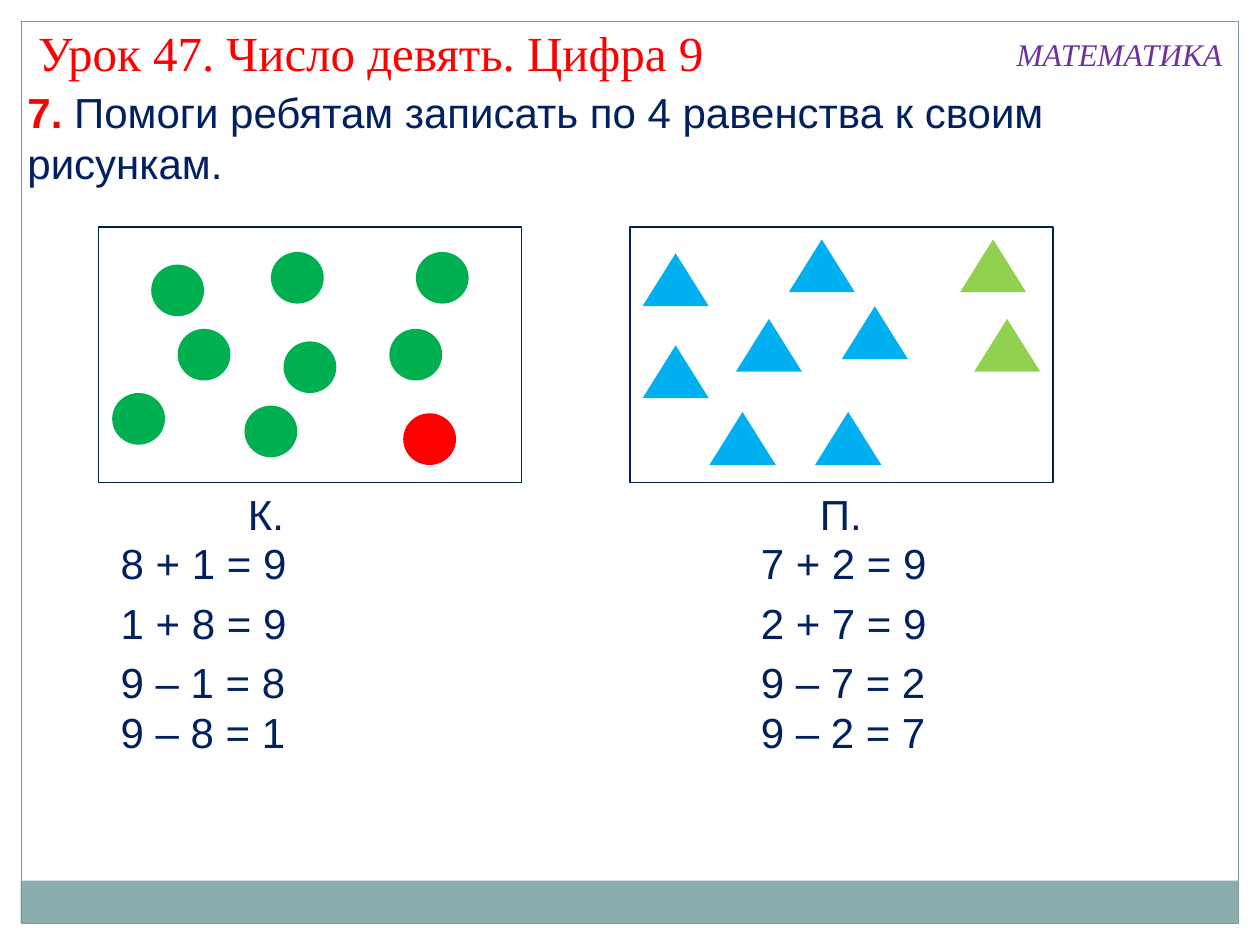
from pptx import Presentation
from pptx.dml.color import RGBColor
from pptx.enum import shapes, text
from pptx.util import Pt

WHITE = RGBColor(0xFF, 0xFF, 0xFF)
BAND = RGBColor(0x8C, 0xAD, 0xAE)
BORDER = RGBColor(0x7C, 0x99, 0x9A)
NAVY = RGBColor(0x00, 0x20, 0x60)
GREEN = RGBColor(0x00, 0xB0, 0x50)
RED = RGBColor(0xFF, 0x00, 0x00)
BLUE = RGBColor(0x00, 0xB0, 0xF0)
LIME = RGBColor(0x92, 0xD0, 0x50)
PURPLE = RGBColor(0x70, 0x30, 0xA0)

RECTANGLE = shapes.MSO_SHAPE.RECTANGLE
CIRCLE = shapes.MSO_SHAPE.FLOWCHART_CONNECTOR
TRIANGLE = shapes.MSO_SHAPE.ISOSCELES_TRIANGLE

deck = Presentation()
deck.slide_width, deck.slide_height = Pt(720), Pt(540)
page = deck.slides.add_slide(deck.slide_layouts[5])
page.background.fill.solid()
page.background.fill.fore_color.rgb = WHITE


def add_figure(kind, left, top, width, height, fill=None, line=None, weight=0.9):
    figure = page.shapes.add_shape(kind, Pt(left), Pt(top), Pt(width), Pt(height))
    figure.shadow.inherit = False
    if fill is None:
        figure.fill.background()
    else:
        figure.fill.solid()
        figure.fill.fore_color.rgb = fill
    if line is None:
        figure.line.fill.background()
    else:
        figure.line.color.rgb = line
        figure.line.width = Pt(weight)


def add_text(words, left, top, width, height, size=24, name="Arial", color=NAVY, wrap=True):
    box = page.shapes.add_textbox(Pt(left), Pt(top), Pt(width), Pt(height))
    box.text_frame.word_wrap = wrap
    para = box.text_frame.paragraphs[0]
    para.text = words
    para.font.size, para.font.name = Pt(size), name
    para.font.color.rgb = color
    return para


add_figure(RECTANGLE, 11.8, 503.3, 695.8, 24.5, fill=BAND)
add_figure(RECTANGLE, 12.2, 12.2, 695.6, 515.6, line=BORDER, weight=0.75)

for frame_left in (56.2, 360):
    add_figure(RECTANGLE, frame_left, 129.6, 241.9, 146.2, line=NAVY)

green_circles = [(101.5, 187.9), (139.7, 231.8), (64.1, 224.6), (162, 195.1),
                 (222.5, 187.9), (86.4, 151.2), (154.8, 144), (237.6, 144)]
red_circles = [(230.4, 236.2)]
blue_triangles = [(367.2, 144.7), (367.2, 197.3), (420.5, 182.2), (465.8, 235.4),
                  (405.4, 235.4), (450.7, 136.8), (481, 175)]
lime_triangles = [(556.6, 182.2), (548.6, 136.8)]

for kind, width, height, color, places in (
    (CIRCLE, 30.2, 29.5, GREEN, green_circles),
    (CIRCLE, 30.2, 29.5, RED, red_circles),
    (TRIANGLE, 37.8, 30.2, BLUE, blue_triangles),
    (TRIANGLE, 37.8, 30.2, LIME, lime_triangles),
):
    for left, top in places:
        add_figure(kind, left, top, width, height, fill=color)

equation_tops = (303.8, 337.7, 371.5, 400.3)
for label, label_left, equation_left, equations in (
    ("К.", 134.6, 61.9, ("8 + 1 = 9", "1 + 8 = 9", "9 – 1 = 8", "9 – 8 = 1")),
    ("П.", 461.5, 427.7, ("7 + 2 = 9", "2 + 7 = 9", "9 – 7 = 2", "9 – 2 = 7")),
):
    add_text(label, label_left, 275.8, 50.4, 36)
    for top, equation in zip(equation_tops, equations):
        add_text(equation, equation_left, top, 135.4, 36)

task = add_text("7. ", 8.6, 46.1, 705, 65.5)
task.runs[0].font.bold = True
task.runs[0].font.color.rgb = RED
task.add_run().text = "Помоги ребятам записать по 4 равенства к своим рисункам."

subject = add_text("МАТЕМАТИКА", 573.8, 16.6, 133.2, 28.8, 18, "Times New Roman", PURPLE, wrap=False)
subject.font.italic = True

title = page.shapes.title
title.left, title.top, title.width, title.height = Pt(14.4), Pt(9.4), Pt(436.3), Pt(41)
title.text_frame.auto_size = text.MSO_AUTO_SIZE.NONE
title.text_frame.vertical_anchor = text.MSO_ANCHOR.TOP
heading = title.text_frame.paragraphs[0]
heading.text = "Урок 47. Число девять. Цифра 9"
heading.alignment = text.PP_ALIGN.LEFT
heading.font.size, heading.font.name = Pt(28), "Times New Roman"
heading.font.color.rgb = RED

deck.save("out.pptx")
